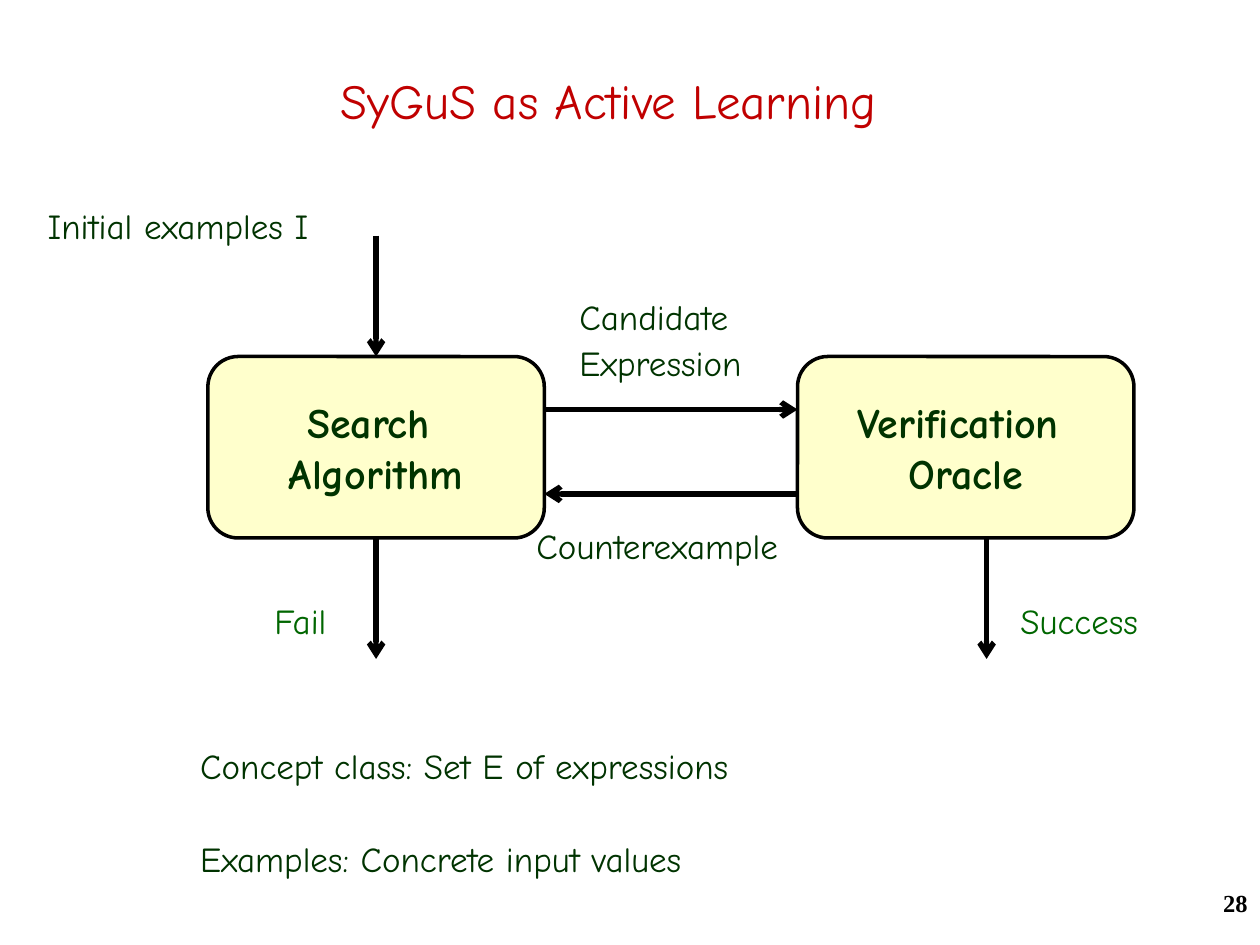
import pptx
import pptx.util
import pptx.dml.color
import pptx.enum.shapes
import pptx.enum.text
import pptx.oxml.ns
import lxml.etree

Inches = pptx.util.Inches
Pt = pptx.util.Pt
ALIGN = pptx.enum.text.PP_ALIGN
ANCHOR = pptx.enum.text.MSO_ANCHOR

COLORS = {
    "title": "C00000",
    "text": "003300",
    "result": "006600",
    "box": "FFFFCC",
    "line": "000000",
}
FONT = "Comic Neue"
BOX_TOP, BOX_WIDTH, BOX_HEIGHT = 2.83, 2.67, 1.44
BOX_BOTTOM = BOX_TOP + BOX_HEIGHT
SEARCH_LEFT, ORACLE_LEFT = 1.65, 6.33
SEARCH_RIGHT = SEARCH_LEFT + BOX_WIDTH
SEARCH_MIDDLE = SEARCH_LEFT + BOX_WIDTH / 2
SUCCESS_X = 7.83
ARROW_LENGTH = 0.96


def color(name):
    return pptx.dml.color.RGBColor.from_string(COLORS[name])


def write_text(shape, text, size, color_name, align=ALIGN.LEFT, bold=False, font=FONT):
    shape.text_frame.text = text
    for para in shape.text_frame.paragraphs:
        para.alignment = align
        for span in para.runs:
            span.font.name = font
            span.font.size = Pt(size)
            span.font.bold = bold
            span.font.color.rgb = color(color_name)


def add_text(page, left, top, width, height, text, size, color_name, **style):
    box = page.shapes.add_textbox(Inches(left), Inches(top), Inches(width), Inches(height))
    write_text(box, text, size, color_name, **style)
    box.text_frame.word_wrap = True
    return box


def add_label(page, left, top, width, height, text, color_name="text", gap=7):
    box = add_text(page, left, top, width, height, text, 20, color_name)
    for para in box.text_frame.paragraphs:
        para.line_spacing = 0.8
        para.space_before = Pt(7)
    for para in box.text_frame.paragraphs[1:]:
        para.space_before = Pt(gap)


def add_process(page, left, text):
    box = page.shapes.add_shape(
        pptx.enum.shapes.MSO_SHAPE.ROUNDED_RECTANGLE,
        Inches(left), Inches(BOX_TOP), Inches(BOX_WIDTH), Inches(BOX_HEIGHT))
    box.shadow.inherit = False
    box.fill.solid()
    box.fill.fore_color.rgb = color("box")
    box.line.color.rgb = color("line")
    box.line.width = Pt(2)
    write_text(box, text, 24, "text", align=ALIGN.CENTER, bold=True)
    box.text_frame.word_wrap = False
    box.text_frame.vertical_anchor = ANCHOR.MIDDLE
    return box


def add_arrow(page, x1, y1, x2, y2):
    arrow = page.shapes.add_connector(
        pptx.enum.shapes.MSO_CONNECTOR.STRAIGHT,
        Inches(x1), Inches(y1), Inches(x2), Inches(y2))
    arrow.line.color.rgb = color("line")
    arrow.line.width = Pt(3)
    qn = pptx.oxml.ns.qn
    lxml.etree.SubElement(arrow.line._get_or_add_ln(), qn("a:tailEnd"), type="arrow")
    lxml.etree.SubElement(arrow._element.spPr, qn("a:effectLst"))
    return arrow


def add_diagram(page):
    search = add_process(page, SEARCH_LEFT, "Search \nAlgorithm")
    add_process(page, ORACLE_LEFT, "Verification \nOracle")

    start = add_arrow(page, SEARCH_MIDDLE, BOX_TOP - ARROW_LENGTH, SEARCH_MIDDLE, BOX_TOP)
    start.end_connect(search, 0)
    fail = add_arrow(page, SEARCH_MIDDLE, BOX_BOTTOM, SEARCH_MIDDLE, BOX_BOTTOM + ARROW_LENGTH)
    fail.begin_connect(search, 2)
    add_arrow(page, SUCCESS_X, BOX_BOTTOM, SUCCESS_X, BOX_BOTTOM + ARROW_LENGTH)
    add_arrow(page, SEARCH_RIGHT, 3.25, ORACLE_LEFT, 3.25)
    add_arrow(page, ORACLE_LEFT, 3.92, SEARCH_RIGHT, 3.92)

    add_label(page, 0.28, 1.64, 2.66, 0.46, "Initial examples I")
    add_label(page, 2.08, 4.77, 0.82, 0.46, "Fail", "result")
    add_label(page, 8, 4.77, 1.67, 0.46, "Success", "result")
    add_label(page, 4.5, 2.36, 1.92, 1.01, "Candidate\nExpression")
    add_label(page, 4.16, 4.18, 2.34, 0.51, "Counterexample")


def main():
    deck = pptx.Presentation()
    deck.slide_width, deck.slide_height = Inches(10), Inches(7.5)
    page = deck.slides.add_slide(deck.slide_layouts[6])

    title = add_text(page, 0.58, 0.17, 8.5, 1.25, "SyGuS as Active Learning",
                     28, "title", align=ALIGN.CENTER)
    title.text_frame.vertical_anchor = ANCHOR.MIDDLE
    add_diagram(page)
    add_label(page, 1.49, 5.92, 6.09, 1.25,
              "Concept class: Set E of expressions\nExamples: Concrete input values", gap=34)
    add_text(page, 7.92, 7, 2.08, 0.5, "28", 14, "line",
             align=ALIGN.RIGHT, bold=True, font="Times New Roman")
    deck.save("out.pptx")


if __name__ == "__main__":
    main()
